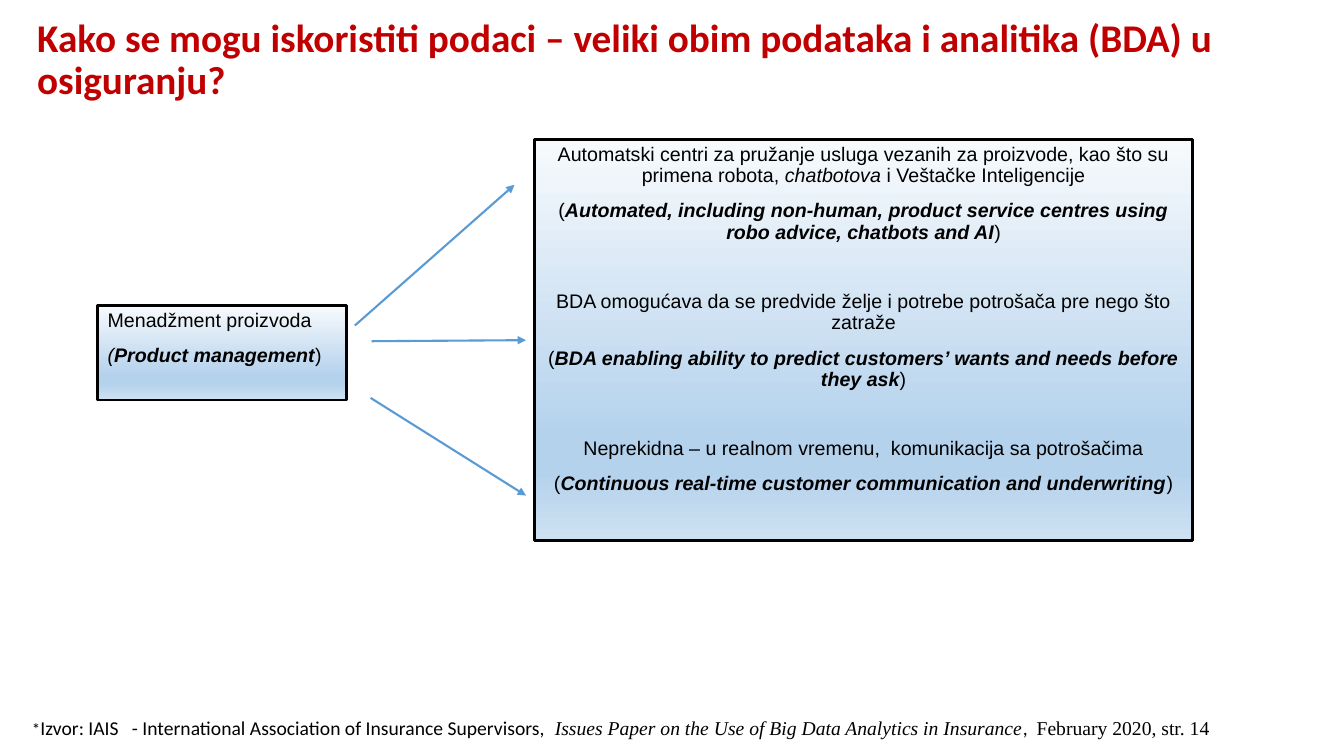
from lxml.etree import SubElement
from pptx import Presentation
from pptx.dml.color import RGBColor
from pptx.enum.shapes import MSO_CONNECTOR, MSO_SHAPE
from pptx.enum.text import MSO_ANCHOR, PP_ALIGN
from pptx.oxml.ns import qn
from pptx.util import Pt

PX = 9525
COLORS = {"title": "C00000", "text": "000000", "border": "000000", "arrow": "5B9BD5"}
GRADIENT = {0: "F7FAFD", 74: "B5D2EC", 83: "B5D2EC", 100: "CEE1F2"}
PARAGRAPH_GAP = 10
GROUP_GAP = 34.5

PRODUCT = [("Menadžment proizvoda", "(", "Product management")]
USES = [
    ([("Automatski centri za pružanje usluga vezanih za proizvode, kao što su primena robota, ", ""),
      ("chatbotova ", "i"), ("i Veštačke Inteligencije", "")],
     "Automated, including non-human, product service centres using robo advice, chatbots and AI"),
    ([("BDA omogućava da se predvide želje i potrebe potrošača pre nego što zatraže", "")],
     "BDA enabling ability to predict customers’ wants and needs before they ask"),
    ([("Neprekidna – u realnom vremenu,  komunikacija sa potrošačima", "")],
     "Continuous real-time customer communication and underwriting"),
]
ARROWS = [(338, 310, 490, 176), (354, 325, 501, 324), (353, 379, 501, 472)]


def rgb(name):
    return RGBColor.from_string(COLORS[name])


def scaled(*lengths):
    return [length * PX for length in lengths]


def add_span(para, text, style="", font="Arial", size=14, color="text"):
    """Add a run; style may hold b for bold and i for italic."""
    span = para.add_run()
    span.text = text
    span.font.name = font
    span.font.size = Pt(size)
    span.font.bold = "b" in style
    span.font.italic = "i" in style
    span.font.color.rgb = rgb(color)


def add_text_box(page, bounds, anchor=MSO_ANCHOR.TOP):
    """Add an empty wrapping text box and return its paragraph."""
    frame = page.shapes.add_textbox(*scaled(*bounds)).text_frame
    frame.word_wrap = True
    frame.vertical_anchor = anchor
    return frame.paragraphs[0]


def fill_with_gradient(box):
    box.fill.gradient()
    box.fill.gradient_angle = 270
    stops = box.fill._xPr.find(".//" + qn("a:gsLst"))
    for stop in list(stops):
        stops.remove(stop)
    for position, color in GRADIENT.items():
        stop = SubElement(stops, qn("a:gs"), pos=str(position * 1000))
        SubElement(stop, qn("a:srgbClr"), val=color)


def add_gradient_box(page, bounds, groups, align, bracket_style=""):
    """Add a box of groups, each a local phrase above its English term in brackets."""
    box = page.shapes.add_shape(MSO_SHAPE.RECTANGLE, *scaled(*bounds))
    box.shadow.inherit = False
    fill_with_gradient(box)
    box.line.color.rgb = rgb("border")
    box.line.width = Pt(1.75)
    frame = box.text_frame
    frame.word_wrap = True
    frame.vertical_anchor = MSO_ANCHOR.TOP
    para = frame.paragraphs[0]
    for index, (phrase, term) in enumerate(groups):
        bracketed = [("(", bracket_style), (term, "bi"), (")", "")]
        for row, spans in enumerate((phrase, bracketed)):
            if index or row:
                para = frame.add_paragraph()
            starts_group = index and not row
            para.space_before = Pt(GROUP_GAP if starts_group else PARAGRAPH_GAP)
            para.line_spacing = 0.9
            para.alignment = align
            for text, style in spans:
                add_span(para, text, style)


def add_arrow(page, points):
    arrow = page.shapes.add_connector(MSO_CONNECTOR.STRAIGHT, *scaled(*points))
    arrow.line.color.rgb = rgb("arrow")
    arrow.line.width = Pt(1.5)
    SubElement(arrow.line._get_or_add_ln(), qn("a:tailEnd"), type="triangle")
    SubElement(arrow._element.spPr, qn("a:effectLst"))


def add_title(page):
    para = add_text_box(page, (26, 38, 1243, 40), MSO_ANCHOR.MIDDLE)
    para.line_spacing = 0.9
    add_span(para, "Kako se mogu iskoristiti podaci – veliki obim podataka i analitika (BDA) u osiguranju?",
             "b", "Calibri", 28, "title")


def add_source_note(page):
    para = add_text_box(page, (21, 676, 1220, 34))
    para.line_spacing = 1.07
    para.space_after = Pt(8)
    add_span(para, "*", font="Calibri", size=12)
    add_span(para, "Izvor: IAIS   - International Association of Insurance Supervisors, ", font="Calibri")
    add_span(para, " Issues Paper on the Use of Big Data Analytics in Insurance", "i", "Times New Roman")
    add_span(para, ",  ", font="Calibri")
    add_span(para, "February 2020, str. 14", font="Times New Roman")


def main():
    deck = Presentation()
    deck.slide_width, deck.slide_height = scaled(1280, 720)
    page = deck.slides.add_slide(deck.slide_layouts[6])
    add_title(page)
    product = [([(phrase, "")], term) for phrase, _, term in PRODUCT]
    add_gradient_box(page, (93, 291, 237, 90), product, PP_ALIGN.LEFT, "i")
    add_gradient_box(page, (509, 133, 627, 382), USES, PP_ALIGN.CENTER)
    for points in ARROWS:
        add_arrow(page, points)
    add_source_note(page)
    deck.save("out.pptx")


if __name__ == "__main__":
    main()
